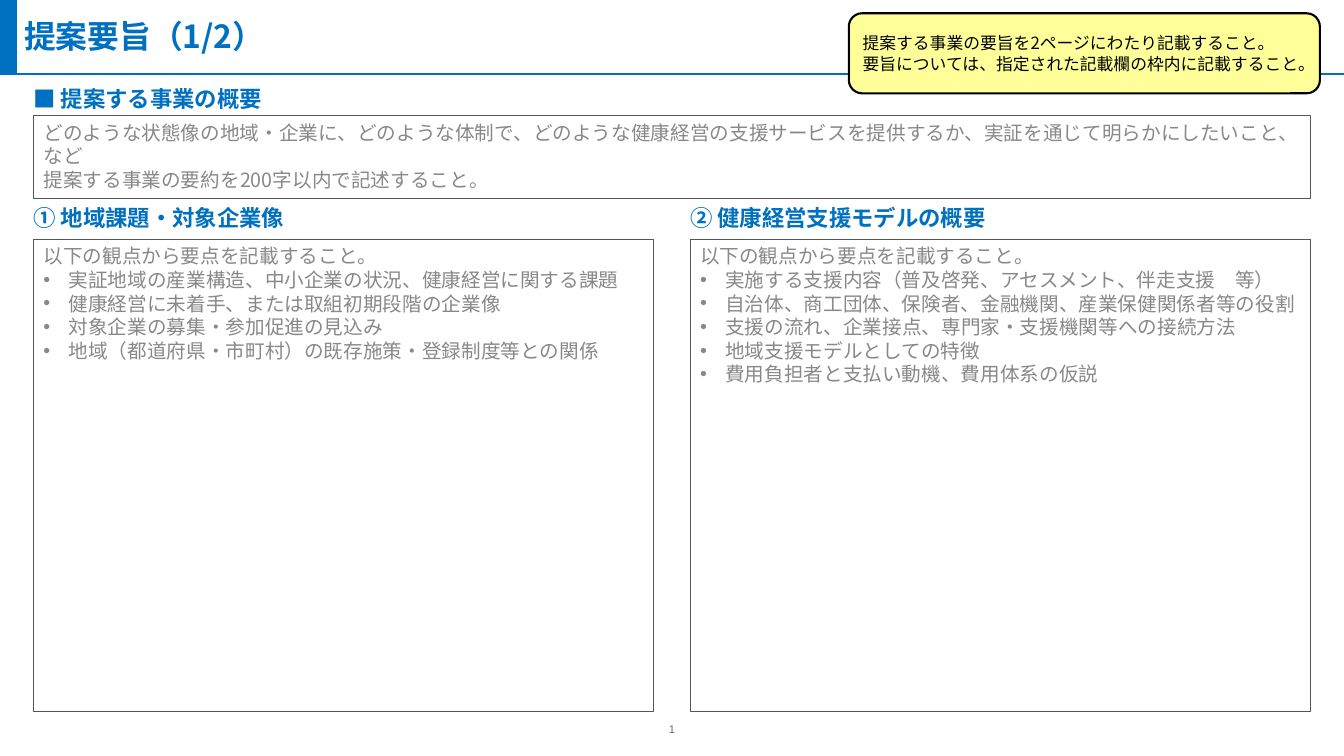
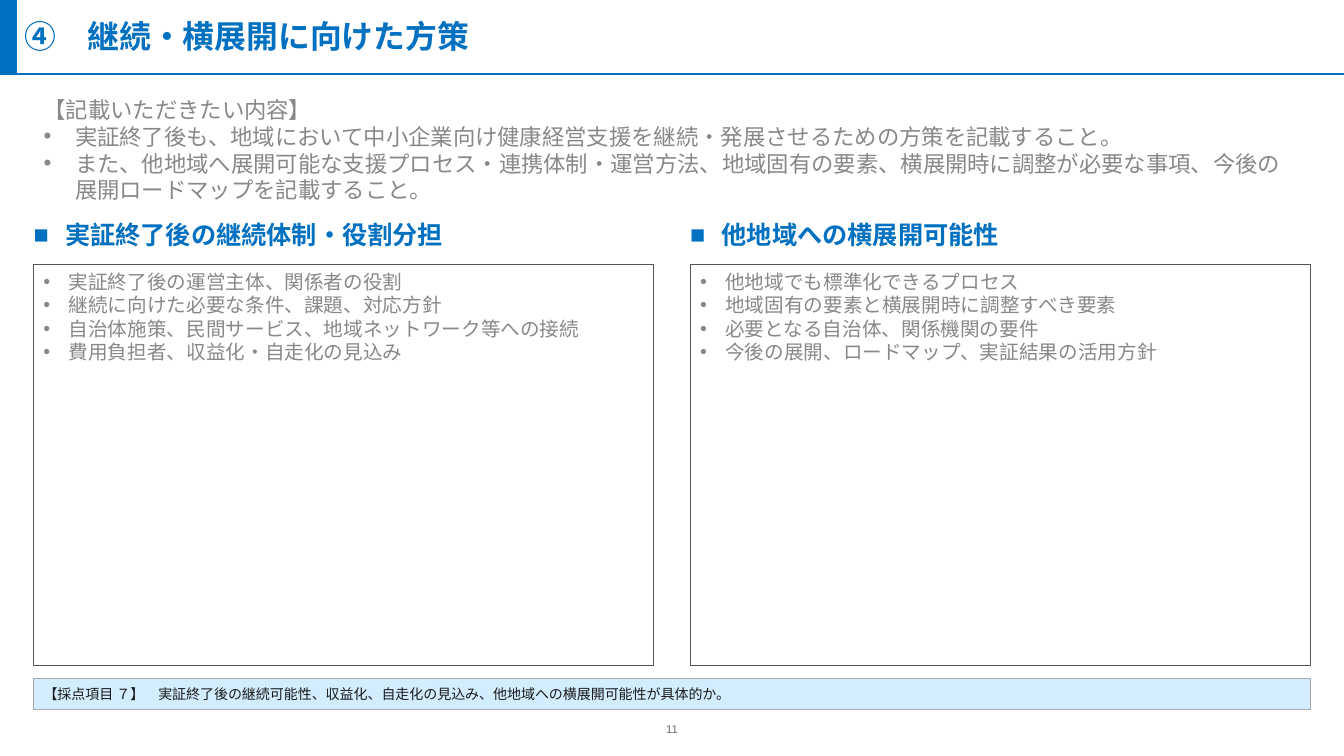
from dataclasses import dataclass
from typing import Optional

from lxml import etree
from pptx import Presentation
from pptx import util as u
from pptx.dml.color import RGBColor
from pptx.enum import shapes, text
from pptx.oxml import ns

Pt = u.Pt
TOP, MIDDLE = text.MSO_ANCHOR.TOP, text.MSO_ANCHOR.MIDDLE
LEFT, CENTER = text.PP_ALIGN.LEFT, text.PP_ALIGN.CENTER


# Theme: colours, type sizes and fonts
@dataclass(frozen=True)
class Theme:
    blue: str = "0070C0"
    white: str = "FFFFFF"
    black: str = "000000"
    frame: str = "555555"
    hint: str = "888888"
    note: str = "FFFF99"
    score: str = "D1EDFE"
    score_line: str = "AAAAAA"
    score_text: str = "1A1A1A"
    page: str = "6B6B6B"
    title_size: float = 22.7
    large: float = 18
    heading: float = 16
    body: float = 14
    callout: float = 12
    small: float = 10
    page_size: float = 8
    font: str = "Noto Sans CJK JP"
    latin: str = "Arial"
    leading: float = 1.2


T = Theme()

# Page grid
W, H = 960, 540
MARGIN, GUTTER = 24, 26
FULL = W - 2 * MARGIN
COL = (FULL - GUTTER) / 2
COLUMNS = (MARGIN, MARGIN + COL + GUTTER)
BAND_W, BAND_H = 11.5, 52.8


@dataclass(frozen=True)
class Style:
    size: float
    color: str
    bold: bool = False
    font: str = T.font
    align: text.PP_ALIGN = LEFT
    anchor: text.MSO_ANCHOR = TOP
    inset: tuple[float, float] = (7.2, 3.6)
    bullet: str = ""
    hang: float = 0
    plain: int = 0  # leading lines without a bullet


@dataclass(frozen=True)
class Look:
    fill: str
    line: Optional[str] = None
    weight: float = 0
    kind: shapes.MSO_SHAPE = shapes.MSO_SHAPE.RECTANGLE


@dataclass(frozen=True)
class Box:
    at: tuple[float, float, float, float]
    lines: tuple[str, ...]
    style: Style
    look: Optional[Look] = None


TITLE = Style(T.title_size, T.blue, True, anchor=MIDDLE, inset=(0, 0))
HEADING = Style(T.heading, T.blue, True, anchor=MIDDLE, inset=(0, 0))
SQUARE = Style(T.large, T.blue, True, inset=(0, 3.6), bullet="■", hang=22.5)
HINT = Style(T.body, T.hint)
POINTS = Style(T.body, T.hint, bullet="•", hang=18)
LED_POINTS = Style(T.body, T.hint, bullet="•", hang=18, plain=1)
GUIDE = Style(T.heading, T.hint, bullet="•", hang=22.5, plain=1)
CALLOUT = Style(T.callout, T.black, anchor=MIDDLE)
SCORE = Style(T.small, T.score_text, anchor=MIDDLE)
PAGE = Style(T.page_size, T.page, font=T.latin, align=CENTER, anchor=MIDDLE, inset=(0, 0))

FRAME = Look(T.white, T.frame, 0.75)
BARE = Look(T.white)
BAND = Look(T.blue, T.blue, 1)
NOTE = Look(T.note, T.black, 1.5, shapes.MSO_SHAPE.ROUNDED_RECTANGLE)
SCORE_BAR = Look(T.score, T.score_line, 0.5)


# Text
def add_bullet(p, char: str, hang: float) -> None:
    pPr = p._p.get_or_add_pPr()
    pPr.set("marL", str(int(Pt(hang))))
    pPr.set("indent", str(-int(Pt(hang))))
    etree.SubElement(pPr, ns.qn("a:buFont")).set("typeface", T.latin)
    etree.SubElement(pPr, ns.qn("a:buChar")).set("char", char)


def write(sp, lines: tuple[str, ...], style: Style) -> None:
    tf = sp.text_frame
    dx, dy = (Pt(v) for v in style.inset)
    frame = {"word_wrap": True, "auto_size": text.MSO_AUTO_SIZE.NONE,
             "vertical_anchor": style.anchor, "margin_left": dx,
             "margin_right": dx, "margin_top": dy, "margin_bottom": dy}
    for name, value in frame.items():
        setattr(tf, name, value)
    for i, line in enumerate(lines):
        p = tf.add_paragraph() if i else tf.paragraphs[0]
        if style.bullet and i >= style.plain:
            add_bullet(p, style.bullet, style.hang)
        layout = {"alignment": style.align, "space_before": Pt(0),
                  "line_spacing": Pt(style.size * T.leading)}
        for name, value in layout.items():
            setattr(p, name, value)
        r = p.add_run()
        r.text = line
        r.font.color.rgb = RGBColor.from_string(style.color)
        face = {"size": Pt(style.size), "bold": style.bold, "name": style.font}
        for name, value in face.items():
            setattr(r.font, name, value)
        etree.SubElement(r._r.get_or_add_rPr(), ns.qn("a:ea")).set("typeface", style.font)


# Shapes
def draw(s, box: Box) -> None:
    at = [Pt(v) for v in box.at]
    if box.look is None:
        sp = s.shapes.add_textbox(*at)
    else:
        look = box.look
        sp = s.shapes.add_shape(look.kind, *at)
        sp.shadow.inherit = False
        sp.fill.solid()
        sp.fill.fore_color.rgb = RGBColor.from_string(look.fill)
        if look.line:
            sp.line.color.rgb = RGBColor.from_string(look.line)
            sp.line.width = Pt(look.weight)
        else:
            sp.line.fill.background()
    write(sp, box.lines, box.style)


def rule(s, y: float) -> None:
    c = s.shapes.add_connector(shapes.MSO_CONNECTOR.STRAIGHT, Pt(0), Pt(y), Pt(W), Pt(y))
    c.line.color.rgb = RGBColor.from_string(T.blue)
    c.line.width = Pt(1.5)
    etree.SubElement(c._element.spPr, ns.qn("a:effectLst"))


def columns(y: float, h: float, texts: tuple[tuple[str, ...], ...],
            style: Style, look: Optional[Look] = None) -> list[Box]:
    return [Box((x, y, COL, h), lines, style, look) for x, lines in zip(COLUMNS, texts)]


def add_slide(prs, title: str, page: str, boxes: list[Box]) -> None:
    s = prs.slides.add_slide(prs.slide_layouts[5])
    sp = s.shapes.title
    place = {"left": 17.3, "top": 2.9, "width": FULL, "height": 46}
    for name, value in place.items():
        setattr(sp, name, Pt(value))
    write(sp, (title,), TITLE)
    draw(s, Box((0, 0, BAND_W, BAND_H), (), HINT, BAND))
    rule(s, BAND_H)
    for box in boxes:
        draw(s, box)
    draw(s, Box((W / 2 - 12, 517, 24, 7.2), (page,), PAGE))


# Slide contents
SUMMARY = [
    Box((MARGIN, 60, FULL, 21), ("■ 提案する事業の概要",), HEADING),
    Box((MARGIN, 82.5, FULL, 59.3), (
        "どのような状態像の地域・企業に、どのような体制で、どのような健康経営の支援サービスを提供するか、実証を通じて明らかにしたいこと、など",
        "提案する事業の要約を200字以内で記述すること。",
    ), HINT, FRAME),
    *columns(145, 21, (("① 地域課題・対象企業像",), ("② 健康経営支援モデルの概要",)), HEADING),
    *columns(171, 337.5, (
        ("以下の観点から要点を記載すること。",
         "実証地域の産業構造、中小企業の状況、健康経営に関する課題",
         "健康経営に未着手、または取組初期段階の企業像",
         "対象企業の募集・参加促進の見込み",
         "地域（都道府県・市町村）の既存施策・登録制度等との関係"),
        ("以下の観点から要点を記載すること。",
         "実施する支援内容（普及啓発、アセスメント、伴走支援　等）",
         "自治体、商工団体、保険者、金融機関、産業保健関係者等の役割",
         "支援の流れ、企業接点、専門家・支援機関等への接続方法",
         "地域支援モデルとしての特徴",
         "費用負担者と支払い動機、費用体系の仮説"),
    ), LED_POINTS, FRAME),
    Box((606.3, 9.5, 336.5, 57.2), (
        "提案する事業の要旨を2ページにわたり記載すること。",
        "要旨については、指定された記載欄の枠内に記載すること。",
    ), CALLOUT, NOTE),
]

ROLLOUT = [
    Box((MARGIN, 65, FULL, 80), (
        "【記載いただきたい内容】",
        "実証終了後も、地域において中小企業向け健康経営支援を継続・発展させるための方策を記載すること。",
        "また、他地域へ展開可能な支援プロセス・連携体制・運営方法、地域固有の要素、横展開時に調整が必要な事項、今後の展開ロードマップを記載すること。",
    ), GUIDE, BARE),
    Box((MARGIN, 484.6, FULL, 22.4), (
        "【採点項目 ７】　実証終了後の継続可能性、収益化、自走化の見込み、他地域への横展開可能性が具体的か。",
    ), SCORE, SCORE_BAR),
    *columns(153.4, 22.5, (("実証終了後の継続体制・役割分担",), ("他地域への横展開可能性",)), SQUARE),
    *columns(189, 286.5, (
        ("実証終了後の運営主体、関係者の役割",
         "継続に向けた必要な条件、課題、対応方針",
         "自治体施策、民間サービス、地域ネットワーク等への接続",
         "費用負担者、収益化・自走化の見込み"),
        ("他地域でも標準化できるプロセス",
         "地域固有の要素と横展開時に調整すべき要素",
         "必要となる自治体、関係機関の要件",
         "今後の展開、ロードマップ、実証結果の活用方針"),
    ), POINTS, FRAME),
]


def main() -> None:
    prs = Presentation()
    prs.slide_width, prs.slide_height = Pt(W), Pt(H)
    add_slide(prs, "提案要旨（1/2）", "1", SUMMARY)
    add_slide(prs, "④　継続・横展開に向けた方策", "11", ROLLOUT)
    prs.save("out.pptx")


if __name__ == "__main__":
    main()
